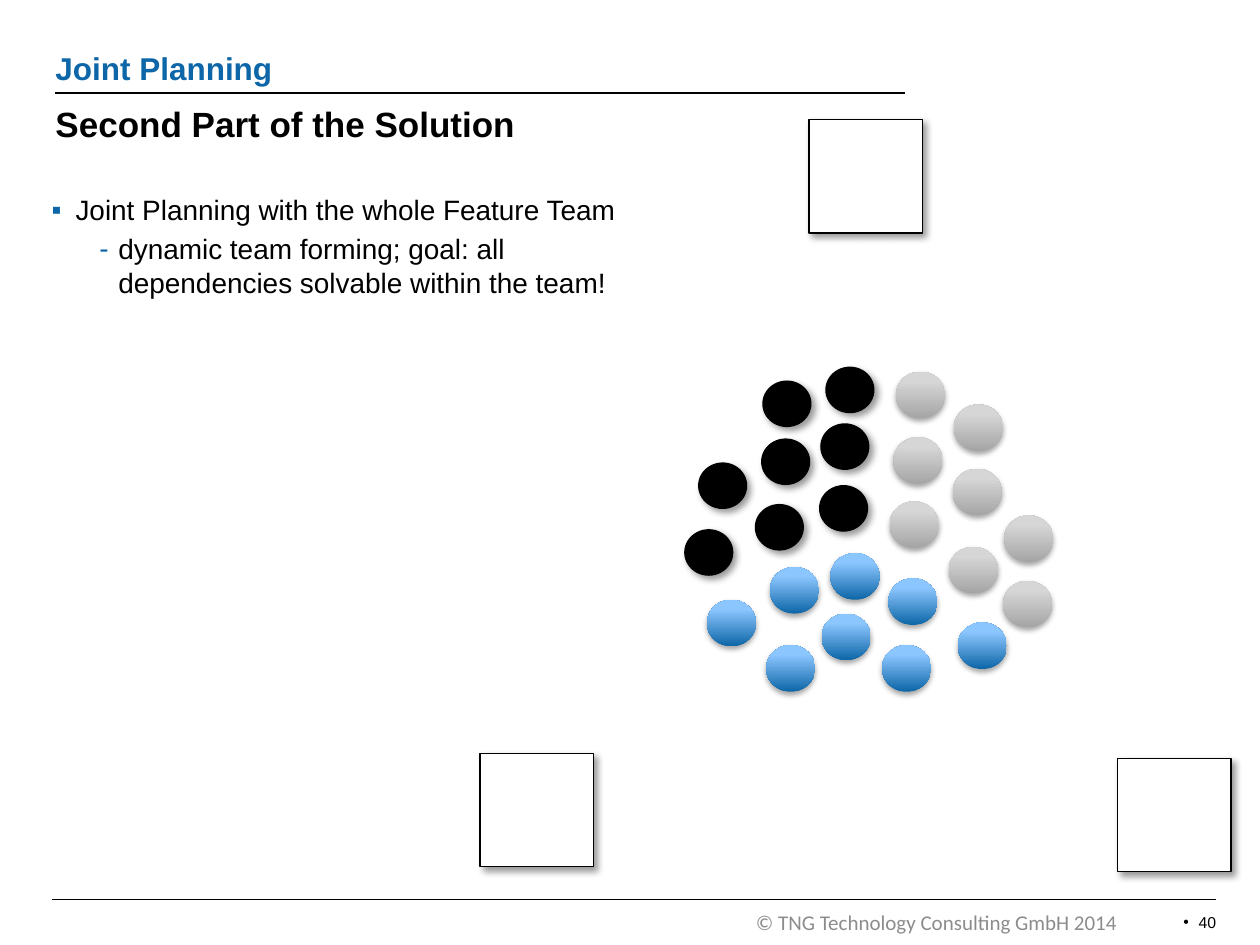
from lxml.etree import SubElement
from pptx import Presentation
from pptx.dml.color import RGBColor
from pptx.enum.shapes import MSO_CONNECTOR, MSO_SHAPE
from pptx.enum.text import MSO_ANCHOR, PP_ALIGN
from pptx.oxml.ns import qn
from pptx.util import Inches, Pt

COLORS = {"ink": "000000", "accent": "0D66A7", "sky": "8CC6FF", "muted": "8C8C8C",
          "gray": "A5A5A5", "silver": "D6D6D6", "paper": "FFFFFF"}
# Shadows: opacity %, blur pt, distance pt, angle
SOFT, HARD = (35, 3.1, 1.8, 90), (40, 4, 3, 45)

# Circles of each team: fill colours from bottom to top, shadow, (column, row)
TEAMS = [
    (("accent", "sky"), SOFT, [(65.9, 43.9), (70.5, 45.9), (76, 49.4), (70, 51.2),
                               (60.8, 51.2), (56.1, 47.6), (61.1, 45), (65.2, 48.7)]),
    (("ink",), HARD, [(65.5, 29.1), (55.4, 36.7), (54.3, 42), (59.9, 40),
                      (65, 38.5), (60.4, 34.8), (60.5, 30.2), (65.1, 33.6)]),
    (("gray", "silver"), SOFT, [(75.7, 32.1), (70.9, 34.7), (71.1, 29.5), (79.6, 46.1),
                                (75.3, 43.4), (70.6, 39.8), (75.6, 37.2), (79.7, 40.9)]),
]
SQUARES = [(38.1, 59.8), (64.2, 9.5), (88.7, 60.2)]


def rgb(name):
    return RGBColor.from_string(COLORS[name])


class Deck:
    """Slide builder on a grid of 100 columns by 75 rows."""

    def __init__(self):
        self.prs = Presentation()
        self.prs.slide_width, self.prs.slide_height = Inches(10), Inches(7.5)
        self.cell = self.prs.slide_width / 100
        self.s = self.prs.slides.add_slide(self.prs.slide_layouts[5])

    def units(self, *cells):
        return [round(c * self.cell) for c in cells]

    def frame(self, sp, inset=0, anchor=MSO_ANCHOR.TOP):
        tf = sp.text_frame
        margins = dict.fromkeys(("margin_left", "margin_right", "margin_top", "margin_bottom"),
                                Inches(inset))
        for key, value in {**margins, "word_wrap": True, "vertical_anchor": anchor}.items():
            setattr(tf, key, value)
        return tf

    def paragraph(self, p, text, color="ink", align=PP_ALIGN.LEFT, before=0, bullet=None, **font):
        p.text = text
        p.alignment, p.space_before = align, Pt(before)
        if bullet:
            char, bullet_color, left, hang = bullet
            pPr = p._p.get_or_add_pPr()
            pPr.set("marL", str(Inches(left)))
            pPr.set("indent", str(-Inches(hang)))
            SubElement(SubElement(pPr, qn("a:buClr")), qn("a:srgbClr"), val=COLORS[bullet_color])
            SubElement(pPr, qn("a:buFont"), typeface="Arial")
            SubElement(pPr, qn("a:buChar"), char=char)
        for r in p.runs:
            for key, value in {"name": "Arial", "bold": False, **font}.items():
                setattr(r.font, key, value)
            r.font.color.rgb = rgb(color)

    def title(self, box, text, **fmt):
        sp = self.s.shapes.title
        sp.left, sp.top, sp.width, sp.height = self.units(*box)
        self.paragraph(self.frame(sp).paragraphs[0], text, **fmt)

    def text(self, box, *paragraphs, inset=0, anchor=MSO_ANCHOR.TOP):
        tf = self.frame(self.s.shapes.add_textbox(*self.units(*box)), inset, anchor)
        for i, (text, fmt) in enumerate(paragraphs):
            self.paragraph(tf.add_paragraph() if i else tf.paragraphs[0], text, **fmt)

    def rule(self, left, right, row):
        sp = self.s.shapes.add_connector(MSO_CONNECTOR.STRAIGHT, *self.units(left, row, right, row))
        sp.line.color.rgb, sp.line.width = rgb("ink"), Pt(1)
        SubElement(sp._element.spPr, qn("a:effectLst"))

    def shape(self, kind, box, fills, shadow, outline=None):
        sp = self.s.shapes.add_shape(kind, *self.units(*box))
        if len(fills) > 1:
            sp.fill.gradient()
            sp.fill.gradient_angle = 90
            for stop, name, position in zip(sp.fill.gradient_stops, fills, (0, 0.8)):
                stop.color.rgb, stop.position = rgb(name), position
        else:
            sp.fill.solid()
            sp.fill.fore_color.rgb = rgb(fills[0])
        if outline:
            sp.line.color.rgb, sp.line.width = rgb(outline), Pt(0.75)
        else:
            sp.line.fill.background()
        self.cast(sp, *shadow)

    def cast(self, sp, opacity, blur, distance, angle):
        sp.shadow.inherit = False
        effects = sp._element.spPr.find(qn("a:effectLst"))
        outer = SubElement(effects, qn("a:outerShdw"), blurRad=str(Pt(blur)), dist=str(Pt(distance)),
                           dir=str(angle * 60000), rotWithShape="0")
        color = SubElement(outer, qn("a:srgbClr"), val=COLORS["ink"])
        SubElement(color, qn("a:alpha"), val=str(opacity * 1000))


def main():
    deck = Deck()

    # Header
    deck.rule(4.4, 71.8, 7.4)
    deck.title((4.4, 8.1, 67.7, 3.4), "Second Part of the Solution", size=Pt(20), bold=True)
    deck.text((4.4, 3.9, 66.9, 3), ("Joint Planning", dict(color="accent", size=Pt(18), bold=True)),
              anchor=MSO_ANCHOR.BOTTOM)

    # Bullets
    deck.text((4.1, 15.3, 92.3, 11.8),
              ("Joint Planning with the whole Feature Team",
               dict(size=Pt(16), bullet=("▪", "accent", 0.19, 0.19))),
              ("dynamic team forming; goal: all \vdependencies solvable within the team!",
               dict(size=Pt(16), before=3.2, bullet=("-", "accent", 0.53, 0.15))))

    # Teams
    for fills, shadow, places in TEAMS:
        for place in places:
            deck.shape(MSO_SHAPE.OVAL, (*place, 3.9, 3.7), fills, shadow)

    # Squares around the teams
    for place in SQUARES:
        deck.shape(MSO_SHAPE.RECTANGLE, (*place, 9, 9), ("paper",), HARD, outline="ink")

    # Footer
    deck.rule(4.1, 96.5, 71.4)
    deck.text((60, 72.2, 32.6, 2), ("© TNG Technology Consulting GmbH 2014",
                                    dict(color="muted", size=Pt(12), name="Calibri")))
    deck.text((92.8, 71.7, 4.7, 2.5), ("40", dict(size=Pt(9), align=PP_ALIGN.RIGHT,
                                                  bullet=("•", "ink", 0.12, 0.12))), inset=0.1)

    deck.prs.save("out.pptx")


if __name__ == "__main__":
    main()
